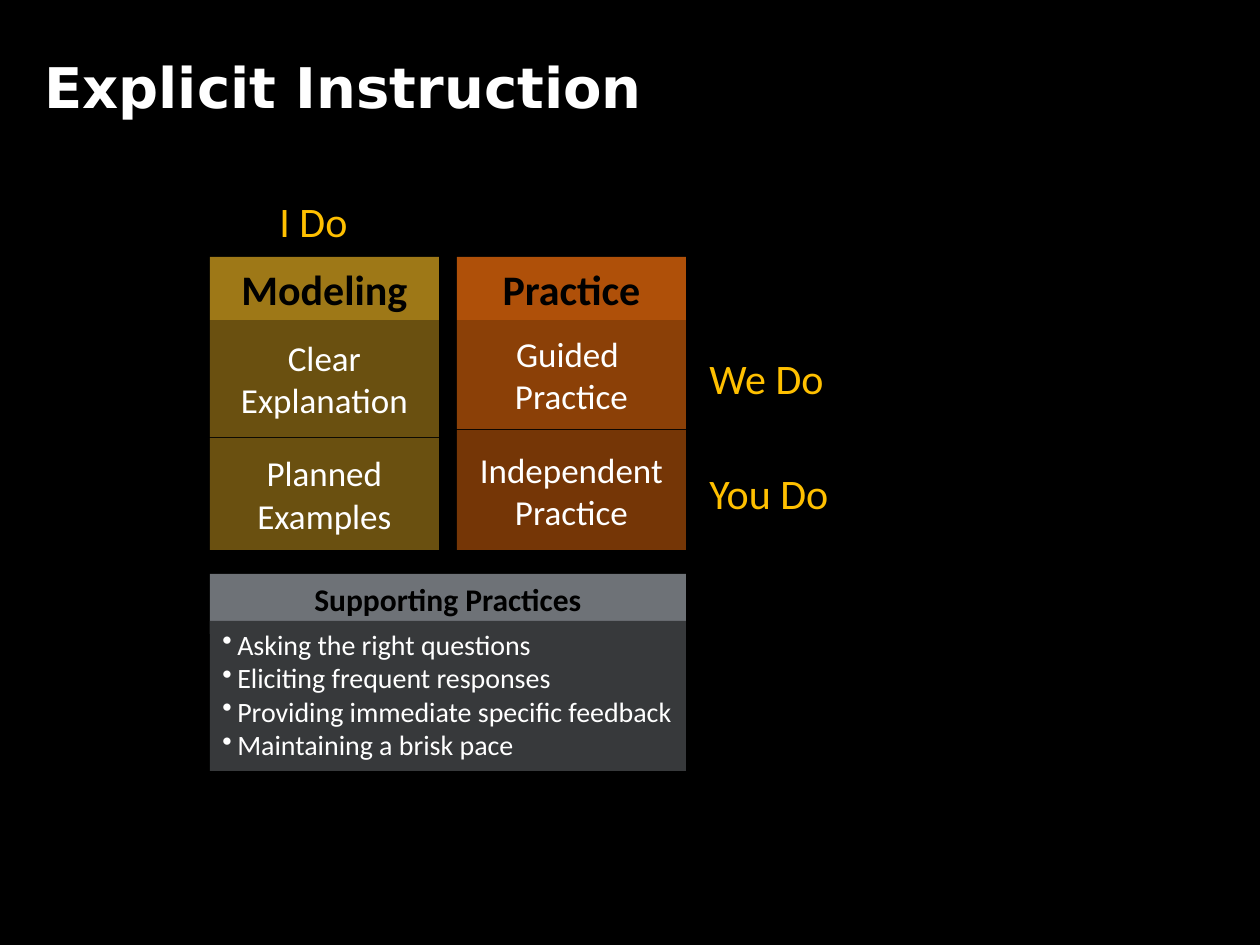
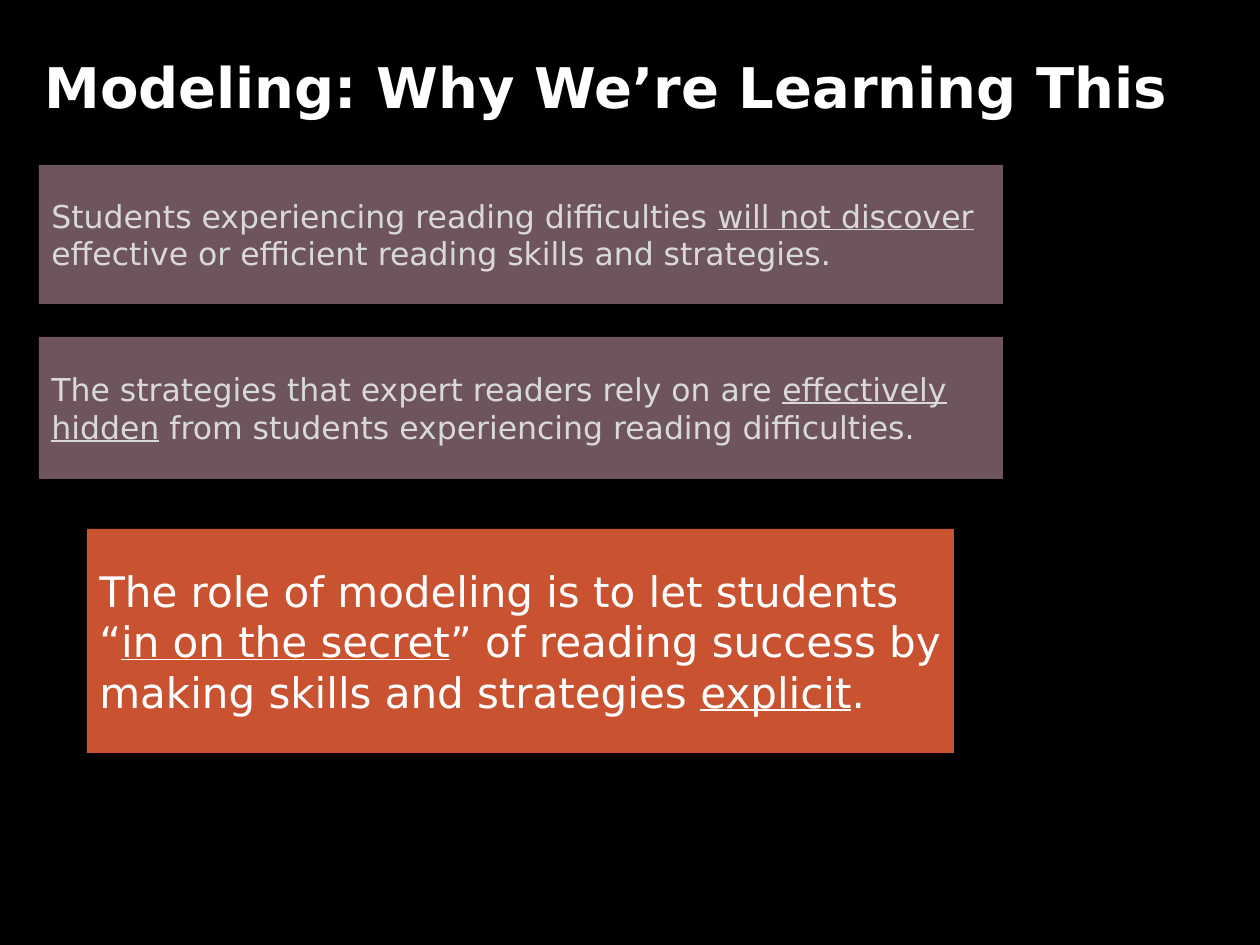
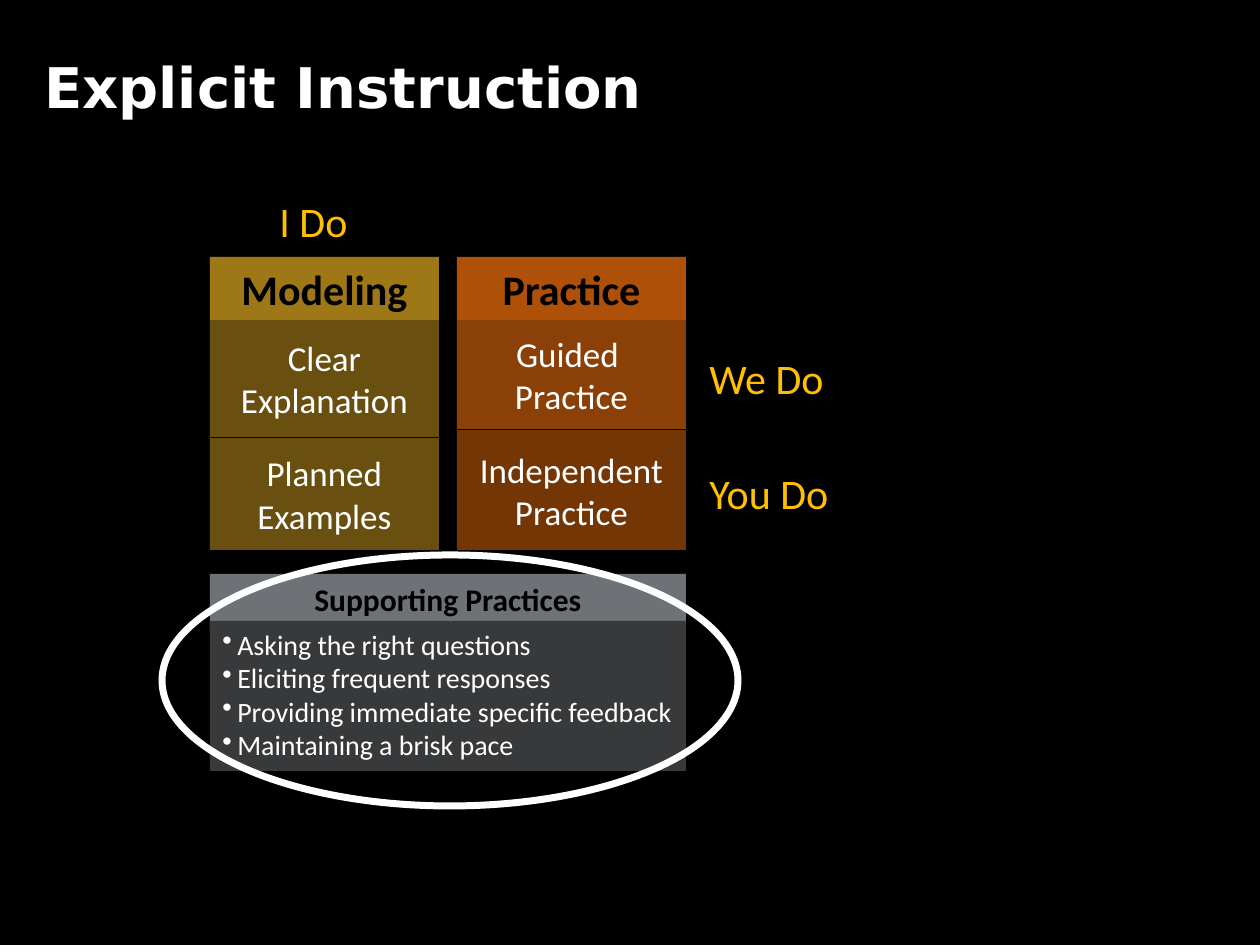
from lxml.etree import SubElement
from pptx import Presentation
from pptx.dml.color import RGBColor
from pptx.enum.shapes import MSO_SHAPE
from pptx.enum.text import MSO_ANCHOR, PP_ALIGN
from pptx.oxml.ns import qn
from pptx.util import Emu, Pt

PX = 914400 / 126  # EMU in one px
BLACK, WHITE, AMBER, PALE = "000000", "FFFFFF", "FFC000", "D9D9D9"
OLIVE, MAUVE, RUST = "6A5010", "6D545D", "C95331"
SANS, BODY = "DejaVu Sans", "Calibri"
BULLET_INDENT = 15


def add_box(page, area, fill=None, kind=MSO_SHAPE.RECTANGLE):
    """Add a preset shape without outline; area is left, top, width, height in px."""
    box = page.shapes.add_shape(kind, *[Emu(round(length * PX)) for length in area])
    box.shadow.inherit = False
    box.line.fill.background()
    if fill:
        box.fill.solid()
        box.fill.fore_color.rgb = RGBColor.from_string(fill)
    else:
        box.fill.background()
    return box


def write(box, text, size=20, color=WHITE, font=BODY, bold=False, align=PP_ALIGN.LEFT,
          anchor=MSO_ANCHOR.MIDDLE, spacing=None, bullet=False):
    """Write one paragraph per line of text; underscores enclose underlined words."""
    frame = box.text_frame
    frame.word_wrap = True
    frame.vertical_anchor = anchor
    for index, line in enumerate(text.split("\n")):
        para = frame.paragraphs[0] if index == 0 else frame.add_paragraph()
        para.alignment = align
        if spacing:
            para.line_spacing = spacing
        if bullet:
            indent = round(BULLET_INDENT * PX)
            properties = para._p.get_or_add_pPr()
            properties.set("marL", str(indent))
            properties.set("indent", str(-indent))
            SubElement(properties, qn("a:buChar"), char="•")
            tabs = SubElement(properties, qn("a:tabLst"))
            SubElement(tabs, qn("a:tab"), pos=str(indent), algn="l")
        for part, words in enumerate(line.split("_")):
            if not words:
                continue
            span = para.add_run()
            span.text = words
            span.font.name = font
            span.font.size = Pt(size)
            span.font.bold = bold
            span.font.underline = part % 2 == 1
            span.font.color.rgb = RGBColor.from_string(color)


deck = Presentation()
deck.slide_width = Emu(round(1260 * PX))
deck.slide_height = Emu(round(945 * PX))

# Black pages with their titles
pages = []
for title in ["Explicit Instruction", "Modeling: Why We’re Learning This", "Explicit Instruction"]:
    page = deck.slides.add_slide(deck.slide_layouts[6])
    page.background.fill.solid()
    page.background.fill.fore_color.rgb = RGBColor.from_string(BLACK)
    write(add_box(page, (32, 32, 1197, 101)), title, size=32, font=SANS, bold=True, spacing=1.1)
    pages.append(page)
overview, reasons, support = pages

# Model of explicit instruction, shown on the first and last pages
MODELING, PRACTICE, COLUMN = 210, 457, 229
FULL_WIDTH = PRACTICE + COLUMN - MODELING
steps = [
    (MODELING, 438, 112, OLIVE, "Planned\nExamples"),
    (MODELING, 320, 117, OLIVE, "Clear Explanation"),
    (PRACTICE, 430, 120, "753606", "Independent Practice"),
    (PRACTICE, 320, 109, "8B4007", "Guided \nPractice"),
]
headings = [(MODELING, "9E7817", "Modeling"), (PRACTICE, "AF5009", "Practice")]
labels = [(267, 189, 117, "I Do"), (697, 346, 229, "We Do"), (697, 461, 200, "You Do")]
practices = "\n".join([
    "Asking the right questions",
    "Eliciting frequent responses",
    "Providing immediate specific feedback",
    "Maintaining a brisk pace",
])

for page in (overview, support):
    for left, top, height, fill, text in steps:
        write(add_box(page, (left, top, COLUMN, height), fill), text, align=PP_ALIGN.CENTER)
    for left, fill, text in headings:
        write(add_box(page, (left, 257, COLUMN, 63), fill), text, size=24, color=BLACK,
              bold=True, align=PP_ALIGN.CENTER, anchor=MSO_ANCHOR.TOP)
    for left, top, width, text in labels:
        write(add_box(page, (left, top, width, 63)), text, size=24, color=AMBER,
              anchor=MSO_ANCHOR.TOP)
    write(add_box(page, (MODELING, 574, FULL_WIDTH, 60), "6E7277"), "Supporting Practices",
          size=18, color=BLACK, bold=True, align=PP_ALIGN.CENTER, anchor=MSO_ANCHOR.TOP)
    write(add_box(page, (MODELING, 621, FULL_WIDTH, 150), "37393B"), practices,
          size=16, anchor=MSO_ANCHOR.TOP, bullet=True)

# Reasons for modeling
statements = [
    ((39, 165, 964, 139), MAUVE, 18, PALE,
     "Students experiencing reading difficulties _will not discover _"
     "effective or efficient reading skills and strategies."),
    ((39, 337, 964, 142), MAUVE, 18, PALE,
     "The strategies that expert readers rely on are _effectively hidden_"
     " from students experiencing reading difficulties."),
    ((87, 529, 867, 224), RUST, 24, WHITE,
     "The role of modeling is to let students\n"
     "“_in on the secret_” of reading success by making skills and strategies _explicit_."),
]
for area, fill, size, color, text in statements:
    write(add_box(reasons, area, fill), text, size=size, color=color, font=SANS)

# Ring around the supporting practices
ring = add_box(support, (162, 555, 576, 251), kind=MSO_SHAPE.OVAL)
ring.line.color.rgb = RGBColor.from_string(WHITE)
ring.line.width = Pt(4)

deck.save("out.pptx")
